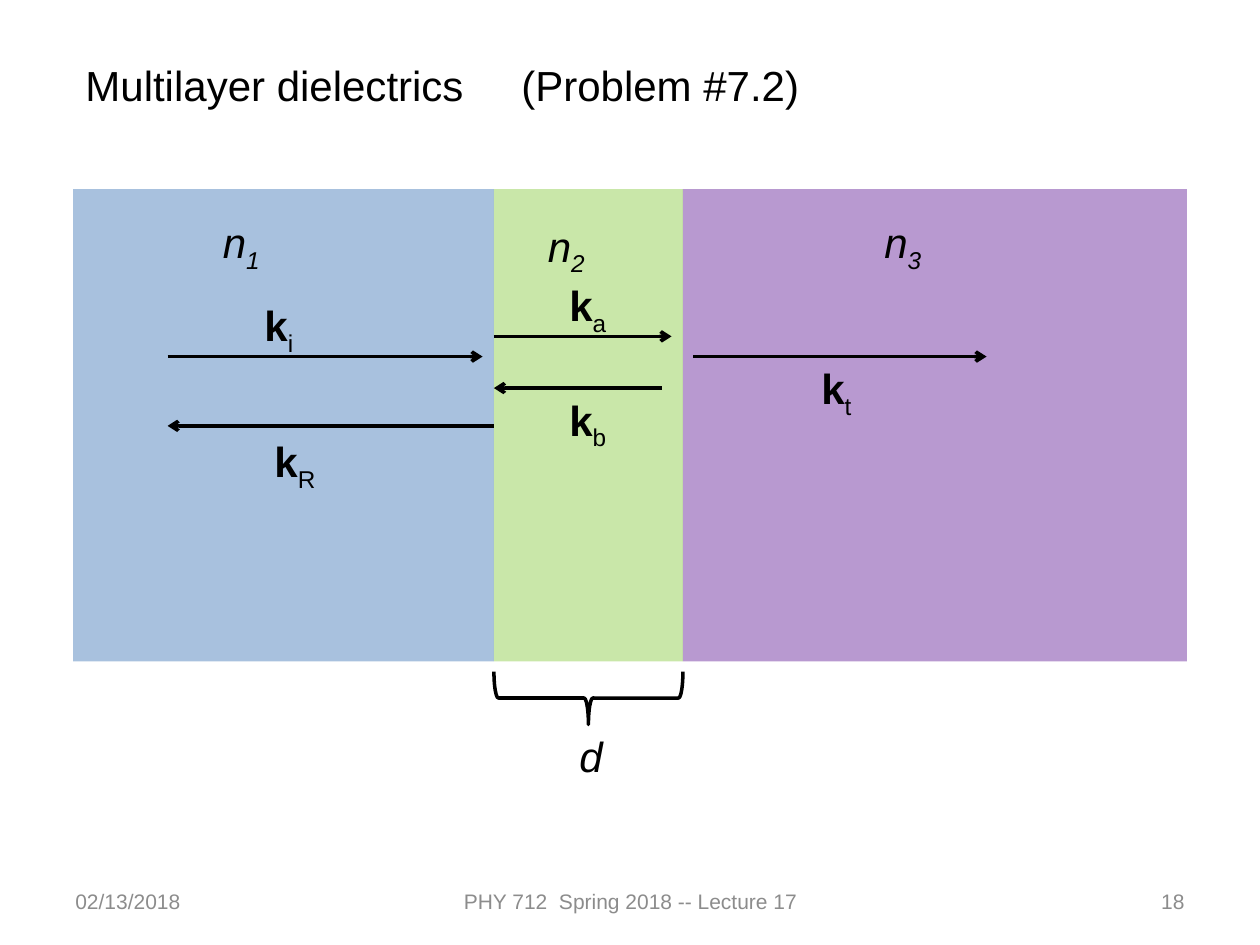
from pptx import Presentation
from pptx.dml.color import RGBColor
from pptx.enum.shapes import MSO_CONNECTOR as Connector, MSO_SHAPE as Shape
from pptx.enum.text import MSO_ANCHOR as Anchor, MSO_AUTO_SIZE as AutoSize, PP_ALIGN as Align
from pptx.oxml.ns import qn
from pptx.util import Inches, Pt
from lxml.etree import SubElement

COLORS = {"ink": "000000", "muted": "8C8C8C", "blue": "4F81BD", "green": "92D050", "purple": "7030A0"}
FONT = "Arial"
LAYER_TOP, LAYER_HEIGHT, LAYER_ALPHA = 1.5, 3.75, 49
LABEL_HEIGHT = 0.5
TITLE = ("Multilayer dielectrics", "(Problem #7.2)")
TITLE_TAB = 3.46

FOOTERS = [
    ("02/13/2018", 0.5, 2.33, Align.LEFT),
    ("PHY 712  Spring 2018 -- Lecture 17", 3.42, 3.17, Align.CENTER),
    ("18", 7.17, 2.33, Align.RIGHT),
]
LAYERS = [("blue", 0.58, 3.92), ("green", 3.92, 5.42), ("purple", 5.42, 9.42)]
WAVES = [
    (1.33, 3.83, 2.83),
    (3.92, 5.33, 2.67),
    (5.25, 3.92, 3.08),
    (5.5, 7.83, 2.83),
    (3.92, 1.33, 3.38),
]
INDICES = [("1", 1.67, 1.67), ("2", 4.25, 1.7), ("3", 6.92, 1.67)]
WAVE_VECTORS = [
    ("i", 2, 2.33),
    ("R", 2.08, 3.41),
    ("t", 6.42, 2.83),
    ("b", 4.42, 3.08),
    ("a", 4.42, 2.17),
]


def rgb(name):
    return RGBColor.from_string(COLORS[name])


def add_text(slide, runs, left, top, width, height=LABEL_HEIGHT, size=24, color="ink",
             align=Align.LEFT, anchor=Anchor.TOP):
    label = slide.shapes.add_textbox(Inches(left), Inches(top), Inches(width), Inches(height))
    frame = label.text_frame
    for name, value in {"word_wrap": True, "vertical_anchor": anchor, "auto_size": AutoSize.NONE}.items():
        setattr(frame, name, value)
    paragraph = frame.paragraphs[0]
    paragraph.alignment = align
    for text, style, baseline in runs:
        run = paragraph.add_run()
        run.text = text
        for name, value in {"name": FONT, "size": Pt(size), **style}.items():
            setattr(run.font, name, value)
        run.font.color.rgb = rgb(color)
        if baseline:
            run._r.get_or_add_rPr().set("baseline", str(baseline * 1000))
    return paragraph


def add_layer(slide, color, left, right):
    layer = slide.shapes.add_shape(Shape.RECTANGLE, Inches(left), Inches(LAYER_TOP),
                                   Inches(right - left), Inches(LAYER_HEIGHT))
    layer.shadow.inherit = False
    layer.fill.solid()
    layer.fill.fore_color.rgb = rgb(color)
    layer.line.fill.background()
    tint = layer._element.spPr.find(qn("a:solidFill")).find(qn("a:srgbClr"))
    SubElement(tint, qn("a:alpha"), val=str(LAYER_ALPHA * 1000))


def ink_line(line):
    line.color.rgb = rgb("ink")
    line.width = Pt(2)


def add_wave(slide, start, end, y):
    wave = slide.shapes.add_connector(Connector.STRAIGHT, Inches(start), Inches(y), Inches(end), Inches(y))
    ink_line(wave.line)
    SubElement(wave.line._get_or_add_ln(), qn("a:tailEnd"), type="arrow")
    SubElement(wave._element.spPr, qn("a:effectLst"))


def add_thickness_brace(slide, left, right, top, depth=0.42):
    span = right - left
    brace = slide.shapes.add_shape(Shape.RIGHT_BRACE, Inches((left + right - depth) / 2),
                                   Inches(top + (depth - span) / 2), Inches(depth), Inches(span))
    brace.rotation = 90
    brace.shadow.inherit = False
    brace.fill.background()
    ink_line(brace.line)


def main():
    deck = Presentation()
    deck.slide_width, deck.slide_height = Inches(10), Inches(7.5)
    slide = deck.slides.add_slide(deck.slide_layouts[6])

    for text, left, width, align in FOOTERS:
        add_text(slide, [(text, {}, 0)], left, 6.95, width, 0.4, 12, "muted", align, Anchor.MIDDLE)

    title = add_text(slide, [("\t".join(TITLE), {}, 0)], 0.58, 0.42, 8.83)
    tabs = SubElement(title._p.get_or_add_pPr(), qn("a:tabLst"))
    SubElement(tabs, qn("a:tab"), pos=str(Inches(TITLE_TAB)), algn="l")

    for layer in LAYERS:
        add_layer(slide, *layer)
    for wave in WAVES:
        add_wave(slide, *wave)

    italic, bold = {"italic": True}, {"bold": True}
    for subscript, left, top in INDICES:
        add_text(slide, [("n", italic, 0), (subscript, italic, -25)], left, top, 1.83)
    for subscript, left, top in WAVE_VECTORS:
        add_text(slide, [("k", bold, 0), (subscript, {}, -25)], left, top, 0.92)

    _, film_left, film_right = LAYERS[1]
    add_thickness_brace(slide, film_left, film_right, LAYER_TOP + LAYER_HEIGHT + 0.08)
    add_text(slide, [("d", italic, 0)], 4.5, 5.75, 0.75)

    deck.save("out.pptx")


if __name__ == "__main__":
    main()
